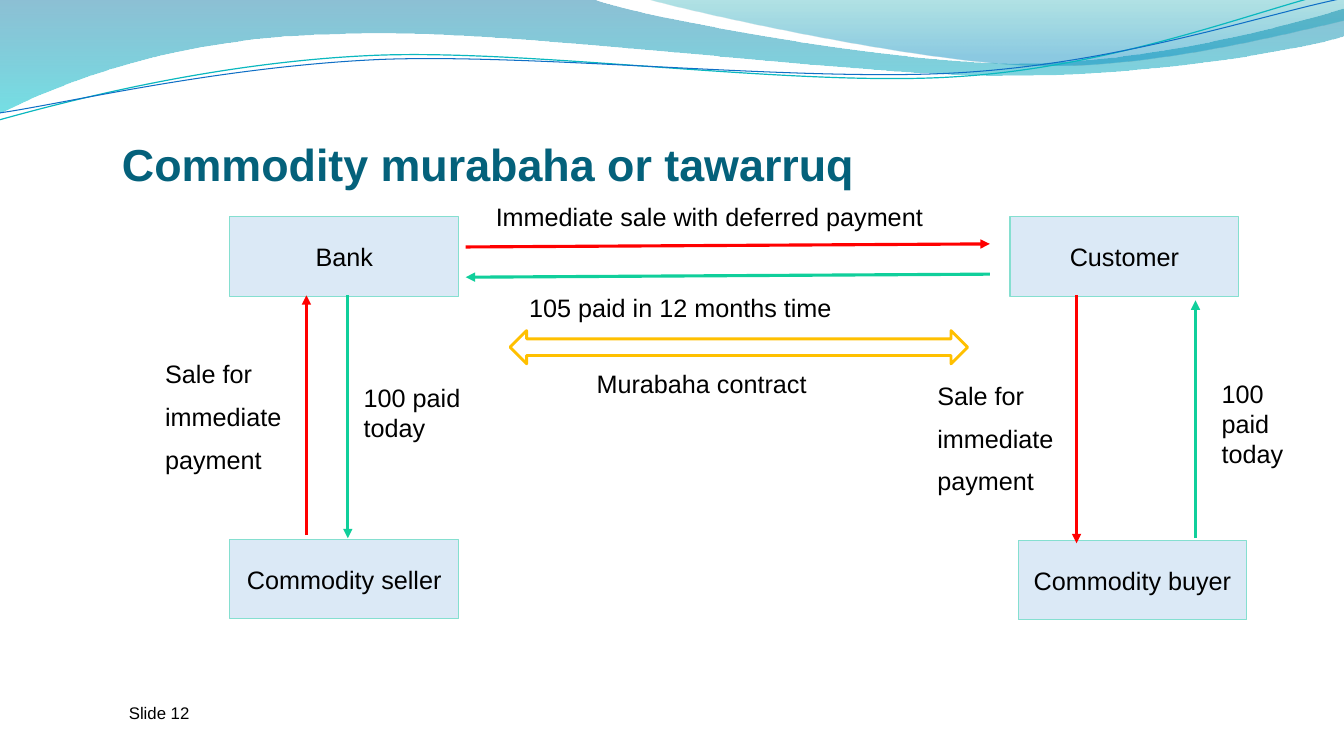
from dataclasses import dataclass

from lxml.etree import SubElement
from pptx import Presentation
from pptx.dml.color import RGBColor
from pptx.enum.shapes import MSO_CONNECTOR, MSO_SHAPE
from pptx.enum.text import MSO_ANCHOR, MSO_AUTO_SIZE, PP_ALIGN
from pptx.oxml.ns import qn
from pptx.shapes.autoshape import Shape
from pptx.slide import Slide
from pptx.text.text import TextFrame
from pptx.util import Inches, Pt

CELL = Inches(0.1)  # all places and sizes are columns and rows of this grid
COLUMNS, ROWS = 133.33, 75
FONT = "Arial"
BOX_SIZE = (22.7, 7.9)

BLACK = RGBColor(0x00, 0x00, 0x00)
TITLE_BLUE = RGBColor(0x04, 0x61, 0x7B)
BOX_BLUE = RGBColor(0x0F, 0x6F, 0xC6)
BOX_EDGE = RGBColor(0x85, 0xDF, 0xD0)
SALE_RED = RGBColor(0xFF, 0x00, 0x00)
PAYMENT_GREEN = RGBColor(0x10, 0xCF, 0x9B)
CONTRACT_GOLD = RGBColor(0xFF, 0xC0, 0x00)
WAVE_TEAL = RGBColor(0x0A, 0xB8, 0xBF)
DEEP_BLUE = RGBColor(0x00, 0x74, 0xA1)
CYAN = RGBColor(0x00, 0xC6, 0xCF)
SEA_GREEN = RGBColor(0x00, 0xA1, 0xA9)
SKY_BLUE = RGBColor(0x00, 0x8B, 0xBF)

Point = tuple[float, float]


@dataclass
class GradientStop:
    position: float
    color: RGBColor
    opacity: int


@dataclass
class Wave:
    """Segments hold one point for a straight line, three for a Bézier curve."""
    start: Point
    segments: list[tuple[Point, ...]]
    stops: tuple[GradientStop, ...] = ()
    color: RGBColor = BLACK
    weight: float = 0


@dataclass
class Party:
    name: str
    column: float
    row: float


@dataclass
class Flow:
    start: Point
    end: Point
    color: RGBColor


@dataclass
class Label:
    lines: tuple[str, ...]
    column: float
    row: float
    width: float
    height: float
    size: int = 18


WAVES = [
    Wave((0, 0), [
        ((58.7, -0.1),),
        ((63.4, 1.7), (88.5, 6.3), (101.1, 6.3)),
        ((113.8, 6.3), (127.8, 2.6), (133.3, 0.9)),
        ((133.5, 3.6),),
        ((131.1, 4.4), (116, 7.6), (99.4, 7.5)),
        ((82.9, 7.5), (50.9, 2.8), (34.3, 3.4)),
        ((17.2, 3.6), (6.1, 8.3), (-0.1, 11.3)),
    ], stops=(GradientStop(0, DEEP_BLUE, 45), GradientStop(1, CYAN, 55))),
    Wave((63.9, -0.1), [
        ((67.9, 1.1), (90.9, 6.2), (102.5, 6.5)),
        ((114.1, 6.9), (128.2, 3.2), (133.3, 2.1)),
        ((133.3, 0),),
    ], stops=(GradientStop(0, SEA_GREEN, 30), GradientStop(0.8, SKY_BLUE, 45))),
    Wave((-0.1, 11.9), [
        ((6.4, 10.1), (21.1, 6.2), (36.9, 5.5)),
        ((52.7, 4.8), (79, 8.7), (95, 7.6)),
        ((111, 6.6), (125.2, 0.8), (133.1, -1)),
    ], color=WAVE_TEAL, weight=0.85),
    Wave((0, 11.2), [
        ((6.3, 10.3), (21.8, 6.6), (37.8, 5.9)),
        ((53.7, 5.3), (79.6, 8.2), (95.5, 7.2)),
        ((111.5, 6.2), (125.4, 1.4), (133.4, -0.2)),
    ], color=BOX_BLUE, weight=0.75),
]

PARTIES = [
    Party("Bank", 22.8, 21.5),
    Party("Commodity seller", 22.8, 53.5),
    Party("Commodity buyer", 101, 53.6),
    Party("Customer", 100.2, 21.5),
]

FLOWS = [
    Flow((106.8, 29.3), (106.8, 53.9), SALE_RED),
    Flow((30.4, 53.1), (30.4, 29.3), SALE_RED),
    Flow((46.2, 24.5), (98.2, 24.2), SALE_RED),
    Flow((34.5, 29.3), (34.5, 53.4), PAYMENT_GREEN),
    Flow((98.2, 27.2), (46.2, 27.5), PAYMENT_GREEN),
    Flow((118.6, 53.4), (118.6, 29.8), PAYMENT_GREEN),
]

SALE = ("Sale for", "immediate", "payment")
PAID = ("100 paid today",)
LABELS = [
    Label(PAID, 35.1, 37.4, 13.3, 7.1),
    Label(SALE, 15.4, 35.1, 15.6, 13.1),
    Label(("Immediate sale with deferred payment",), 48.2, 19.5, 44.4, 4),
    Label(("105 paid in 12 months time",), 51.5, 28.5, 33.8, 4),
    Label(PAID, 120.2, 37, 10.5, 10.1),
    Label(SALE, 92, 37.2, 18, 13.1),
    Label(("Murabaha contract",), 58.2, 36.1, 27.1, 4),
    Label(("Slide 12",), 11.8, 69.2, 23.3, 4, size=12),
]


def cells(*counts: float) -> list[int]:
    return [round(count * CELL) for count in counts]


def set_opacity(shape: Shape, *percents: int) -> None:
    """Give the shape's first colours, in file order, these opacities."""
    for color, percent in zip(shape.element.spPr.iter(qn("a:srgbClr")), percents):
        SubElement(color, qn("a:alpha"), val=str(percent * 1000))


def write(frame: TextFrame, lines: tuple[str, ...], size: int) -> None:
    frame.text = "\n".join(lines)
    for index, paragraph in enumerate(frame.paragraphs):
        paragraph.font.name = FONT
        paragraph.font.size = Pt(size)
        paragraph.font.color.rgb = BLACK
        if index:
            paragraph.space_before = Pt(size / 2)


def bend(shape: Shape, segments: list[tuple[Point, ...]]) -> None:
    """Turn each three straight steps of a curved segment into one Bézier."""
    steps = iter(list(shape.element.spPr.iter(qn("a:lnTo"))))
    for segment in segments:
        first, *others = [next(steps) for _ in segment]
        if others:
            first.tag = qn("a:cubicBezTo")
        for step in others:
            first.append(step[0])
            step.getparent().remove(step)


def draw_wave(slide: Slide, wave: Wave) -> None:
    points = [tuple(cells(*point)) for segment in wave.segments for point in segment]
    builder = slide.shapes.build_freeform(*cells(*wave.start), scale=1.0)
    builder.add_line_segments(points, close=False)
    shape = builder.convert_to_shape()
    bend(shape, wave.segments)
    shape.shadow.inherit = False
    if not wave.stops:
        shape.fill.background()
        shape.line.color.rgb = wave.color
        shape.line.width = Pt(wave.weight)
        return
    shape.line.fill.background()
    shape.fill.gradient()
    shape.fill.gradient_angle = 270
    for target, stop in zip(shape.fill.gradient_stops, wave.stops):
        target.color.rgb = stop.color
        target.position = stop.position
    set_opacity(shape, *(stop.opacity for stop in wave.stops))


def draw_party(slide: Slide, party: Party) -> None:
    box = slide.shapes.add_shape(
        MSO_SHAPE.RECTANGLE, *cells(party.column, party.row, *BOX_SIZE))
    box.shadow.inherit = False
    box.fill.solid()
    box.fill.fore_color.rgb = BOX_BLUE
    set_opacity(box, 15)
    box.line.color.rgb = BOX_EDGE
    box.line.width = Pt(0.75)
    frame = box.text_frame
    frame.word_wrap = False
    frame.vertical_anchor = MSO_ANCHOR.MIDDLE
    frame.margin_left = frame.margin_right = Inches(0.07)
    frame.margin_top = frame.margin_bottom = 0
    write(frame, (party.name,), 18)
    frame.paragraphs[0].alignment = PP_ALIGN.CENTER


def draw_flow(slide: Slide, flow: Flow) -> None:
    arrow = slide.shapes.add_connector(
        MSO_CONNECTOR.STRAIGHT, *cells(*flow.start, *flow.end))
    arrow.line.color.rgb = flow.color
    arrow.line.width = Pt(2.25)
    SubElement(arrow.element.spPr.find(qn("a:ln")), qn("a:tailEnd"), type="triangle")
    SubElement(arrow.element.spPr, qn("a:effectLst"))


def draw_label(slide: Slide, label: Label) -> None:
    place = cells(label.column, label.row, label.width, label.height)
    frame = slide.shapes.add_textbox(*place).text_frame
    frame.word_wrap = True
    write(frame, label.lines, label.size)


def draw_title(slide: Slide) -> None:
    title = slide.shapes.title
    title.left, title.top, title.width, title.height = cells(12.1, 10.6, 74.3, 8.3)
    frame = title.text_frame
    frame.auto_size = MSO_AUTO_SIZE.NONE
    frame.vertical_anchor = MSO_ANCHOR.BOTTOM
    frame.margin_left = frame.margin_right = frame.margin_bottom = 0
    write(frame, ("Commodity murabaha or tawarruq",), 32)
    heading = frame.paragraphs[0]
    heading.alignment = PP_ALIGN.LEFT
    heading.font.bold = True
    heading.font.color.rgb = TITLE_BLUE


def draw_contract_arrow(slide: Slide) -> None:
    contract = slide.shapes.add_shape(
        MSO_SHAPE.LEFT_RIGHT_ARROW, *cells(50.6, 32.8, 45.4, 3.3))
    contract.shadow.inherit = False
    contract.fill.background()
    contract.line.color.rgb = CONTRACT_GOLD
    contract.line.width = Pt(2)


def main() -> None:
    deck = Presentation()
    deck.slide_width, deck.slide_height = cells(COLUMNS, ROWS)
    slide = deck.slides.add_slide(deck.slide_layouts[5])
    for wave in WAVES:
        draw_wave(slide, wave)
    draw_title(slide)
    for party in PARTIES:
        draw_party(slide, party)
    for flow in FLOWS:
        draw_flow(slide, flow)
    draw_contract_arrow(slide)
    for label in LABELS:
        draw_label(slide, label)
    deck.save("out.pptx")


if __name__ == "__main__":
    main()
